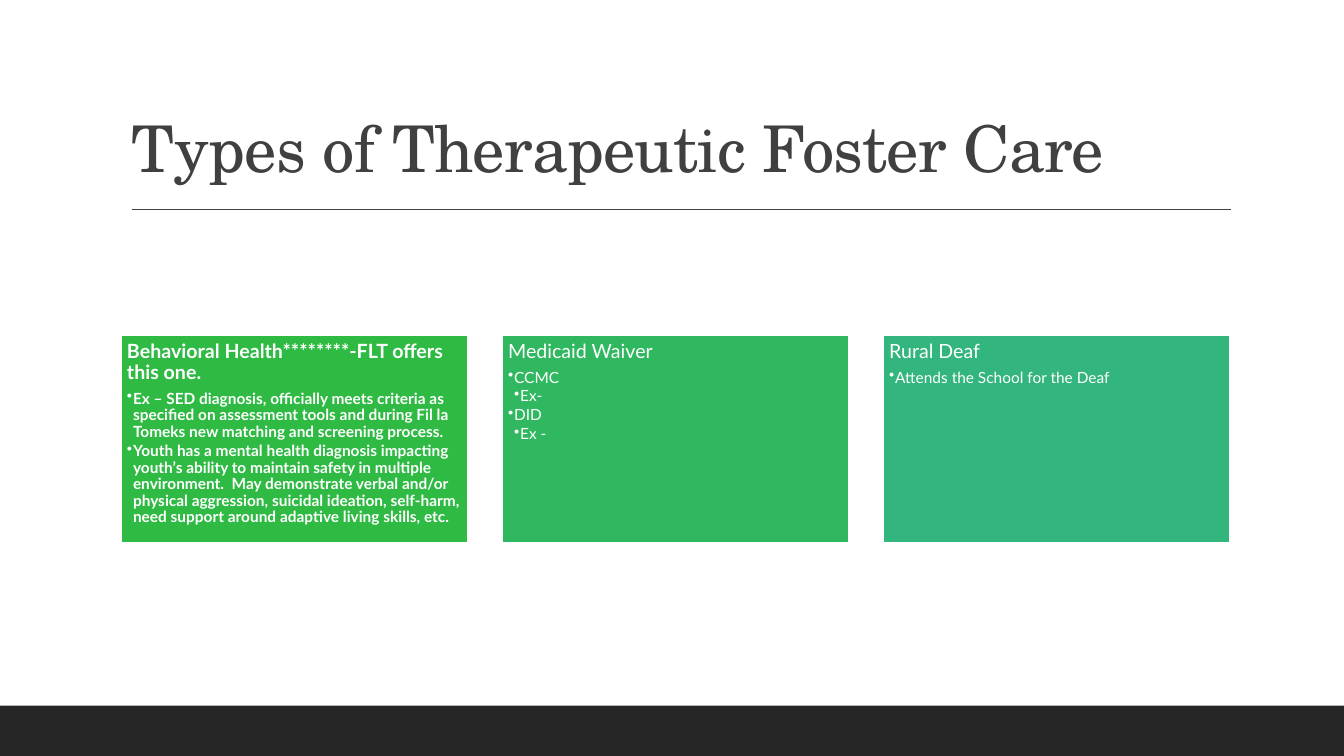
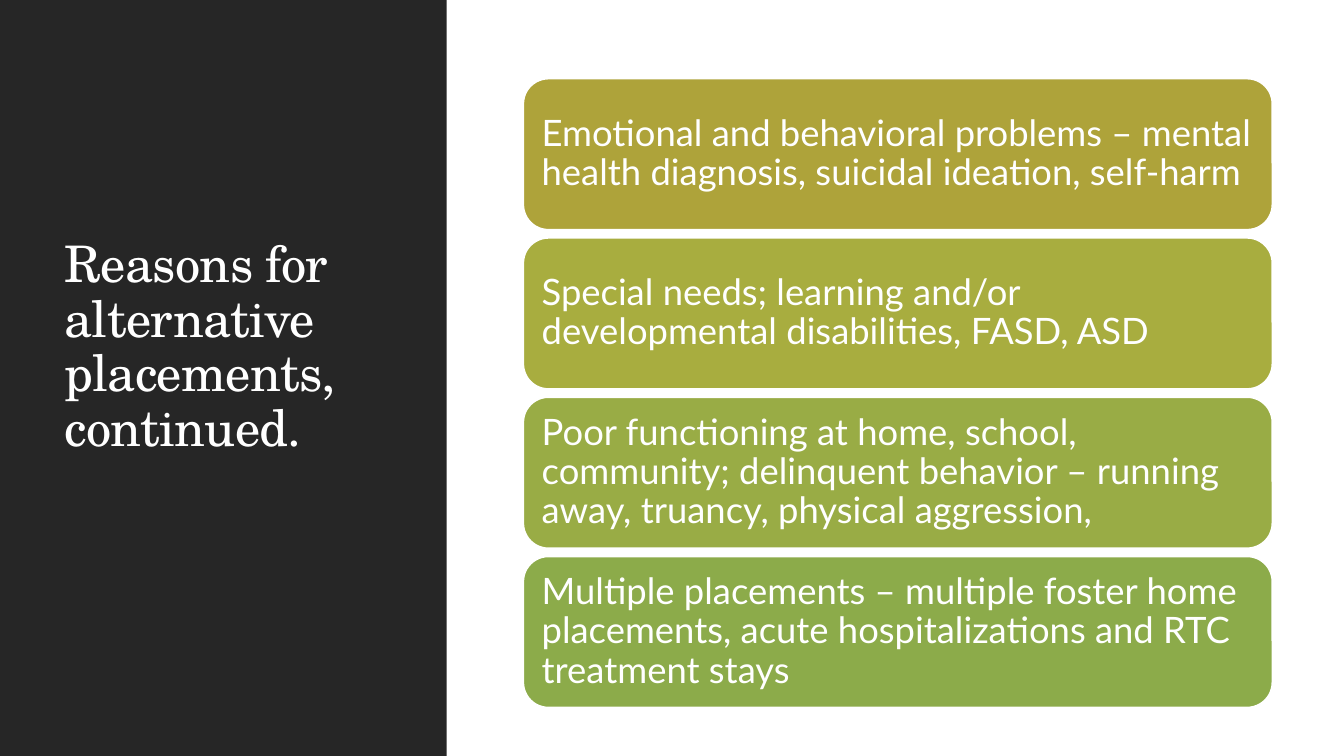
from lxml.etree import SubElement
from pptx import Presentation
from pptx.dml.color import RGBColor
from pptx.enum.shapes import MSO_CONNECTOR as Connector, MSO_SHAPE as Shape
from pptx.enum.text import MSO_ANCHOR as Anchor, MSO_AUTO_SIZE as AutoSize, PP_ALIGN as Align
from pptx.oxml.ns import qn
from pptx.util import Pt

PX = 9144
DARK, GREY, WHITE = "262626", "404040", "FFFFFF"
HEADING_FONT, BODY_FONT = "TeX Gyre Schola", "Lato"
TITLE_ONLY = 5


def add_box(slide, kind, place, fill, line=None):
    shape = slide.shapes.add_shape(kind, *[length * PX for length in place])
    shape.shadow.inherit = False
    shape.fill.solid()
    shape.fill.fore_color.rgb = RGBColor.from_string(fill)
    if line:
        shape.line.color.rgb = RGBColor.from_string(line)
        shape.line.width = Pt(1.25)
    else:
        shape.line.fill.background()
    return shape


def write(paragraph, text, size, font, color, bold=False, after=0):
    run = paragraph.add_run()
    run.text = text
    for name, value in {"size": Pt(size), "name": font, "bold": bold}.items():
        setattr(run.font, name, value)
    run.font.color.rgb = RGBColor.from_string(color)
    spacing = {"alignment": Align.LEFT, "line_spacing": 0.9,
               "space_before": Pt(0), "space_after": Pt(after)}
    for name, value in spacing.items():
        setattr(paragraph, name, value)
    return run


presentation = Presentation()
presentation.slide_width = 1333 * PX
presentation.slide_height = 750 * PX

pages = [
    {"title": "Types of Therapeutic Foster Care", "place": (120, 31, 1100, 159),
     "size": 46, "color": GREY, "anchor": Anchor.BOTTOM, "band": (0, 700, 1333, 50)},
    {"title": "Reasons for alternative placements, continued.", "place": (54, 57, 337, 577),
     "size": 36, "color": WHITE, "anchor": Anchor.MIDDLE, "band": (0, 0, 443, 750)},
]
slides = []
for page in pages:
    slide = presentation.slides.add_slide(presentation.slide_layouts[TITLE_ONLY])
    title = slide.shapes.title
    for name, length in zip(("left", "top", "width", "height"), page["place"]):
        setattr(title, name, length * PX)
    frame = title.text_frame
    for name, value in {"vertical_anchor": page["anchor"], "word_wrap": True,
                        "auto_size": AutoSize.NONE}.items():
        setattr(frame, name, value)
    run = write(frame.paragraphs[0], page["title"], page["size"], HEADING_FONT, page["color"])
    run.font.element.set("spc", "-50") if hasattr(run.font, "element") else run._r.get_or_add_rPr().set("spc", "-50")
    band = add_box(slide, Shape.RECTANGLE, page["band"], DARK)
    title.element.addprevious(band.element)
    slides.append(slide)

types_slide, reasons_slide = slides

rule = types_slide.shapes.add_connector(
    Connector.STRAIGHT, 131 * PX, 208 * PX, 1221 * PX, 208 * PX)
rule.line.color.rgb = RGBColor.from_string(GREY)
rule.line.width = Pt(1)
SubElement(rule.element.spPr, qn("a:effectLst"))

care_types = [
    ("2EBA43", True, "Behavioral Health********-FLT offers this one.", [
        (1, "Ex – SED diagnosis, officially meets criteria as specified on assessment tools "
            "and during Fil la Tomeks new matching and screening process."),
        (1, "Youth has a mental health diagnosis impacting youth’s ability to maintain safety "
            "in multiple environment.  May demonstrate verbal and/or physical aggression, "
            "suicidal ideation, self-harm, need support around adaptive living skills, etc."),
    ]),
    ("30B861", False, "Medicaid Waiver", [(1, "CCMC"), (2, "Ex-"), (1, "DID"), (2, "Ex -")]),
    ("33B67D", False, "Rural Deaf", [(1, "Attends the School for the Deaf")]),
]
for column, (fill, bold, heading, bullets) in enumerate(care_types):
    card = add_box(types_slide, Shape.RECTANGLE, (120 + 378 * column, 333, 344, 206), fill, WHITE)
    frame = card.text_frame
    frame.vertical_anchor = Anchor.TOP
    for side in ("left", "top", "right", "bottom"):
        setattr(frame, f"margin_{side}", 6 * PX)
    write(frame.paragraphs[0], heading, 14, BODY_FONT, WHITE, bold, after=4.9)
    for level, text in bullets:
        paragraph = frame.add_paragraph()
        write(paragraph, text, 11, BODY_FONT, WHITE, bold, after=1.65)
        paragraph.level = level
        properties = paragraph._p.get_or_add_pPr()
        properties.set("marL", str(6 * level * PX))
        properties.set("indent", str(-6 * PX))
        SubElement(properties, qn("a:buChar")).set("char", "•")

reasons = [
    ("AEA33A", "Emotional and behavioral problems – mental health diagnosis, suicidal ideation, self-harm"),
    ("A8AD3F", "Special needs; learning and/or developmental disabilities, FASD, ASD"),
    ("99AC45", "Poor functioning at home, school, community; delinquent behavior – running away, "
               "truancy, physical aggression,"),
    ("8CAB4A", "Multiple placements – multiple foster home placements, acute hospitalizations "
               "and RTC treatment stays"),
]
for row, (fill, text) in enumerate(reasons):
    panel = add_box(reasons_slide, Shape.ROUNDED_RECTANGLE, (519, 78 + 158 * row, 743, 150), fill, WHITE)
    frame = panel.text_frame
    frame.vertical_anchor = Anchor.MIDDLE
    for side in ("left", "top", "right", "bottom"):
        setattr(frame, f"margin_{side}", 11 * PX)
    write(frame.paragraphs[0], text, 26, BODY_FONT, WHITE)

presentation.save("out.pptx")
